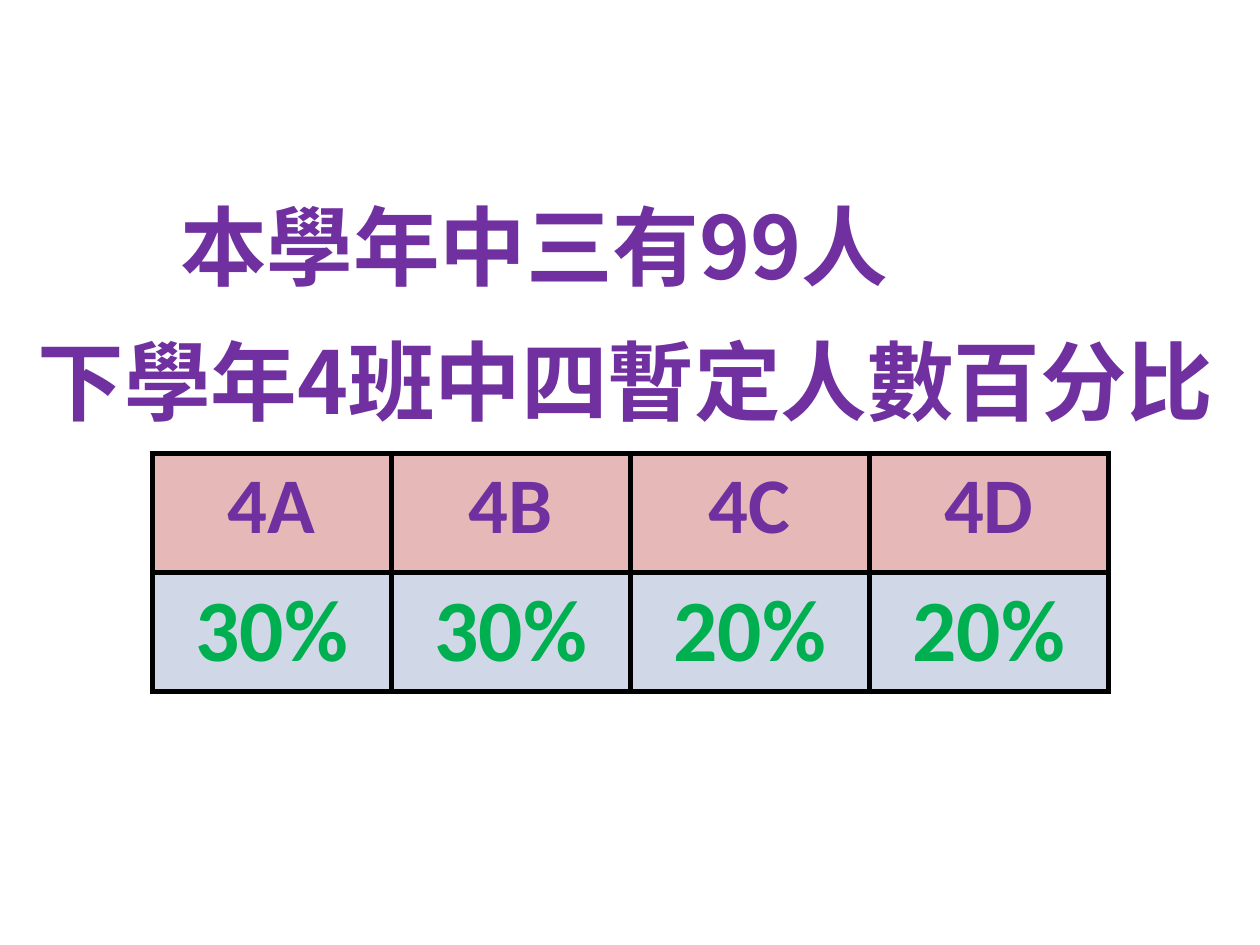
from dataclasses import dataclass

from lxml import etree
from pptx import Presentation
from pptx.dml.color import RGBColor
from pptx.enum import text
from pptx.oxml import ns
from pptx.util import Pt


@dataclass(frozen=True)
class Theme:
    heading_font: str = "Noto Sans CJK TC"
    table_font: str = "Calibri"
    purple: str = "7030A0"
    green: str = "00B050"
    pink: str = "E6B9B8"
    pale_blue: str = "D0D8E8"
    border: str = "000000"
    heading_size: float = 49.5
    class_size: float = 45
    share_size: float = 50
    border_width: float = 3


class SlideBuilder:
    def __init__(self, slide, theme):
        self.slide = slide
        self.theme = theme

    def style_runs(self, frame, font, size, color):
        for paragraph in frame.paragraphs:
            for run in paragraph.runs:
                run.font.name = font
                run.font.size = Pt(size)
                run.font.bold = True
                run.font.color.rgb = RGBColor.from_string(color)
                east_asian = etree.SubElement(run.font._element, ns.qn("a:ea"))
                east_asian.set("typeface", font)

    def write_heading(self, shape, wording):
        frame = shape.text_frame
        frame.text = wording
        frame.word_wrap = True
        frame.auto_size = text.MSO_AUTO_SIZE.SHAPE_TO_FIT_TEXT
        frame.vertical_anchor = text.MSO_ANCHOR.TOP
        frame.paragraphs[0].alignment = text.PP_ALIGN.LEFT
        theme = self.theme
        self.style_runs(frame, theme.heading_font, theme.heading_size, theme.purple)

    def title(self, wording, left, top, width, height):
        shape = self.slide.shapes.title
        shape.left, shape.top = Pt(left), Pt(top)
        shape.width, shape.height = Pt(width), Pt(height)
        self.write_heading(shape, wording)

    def heading(self, wording, left, top, width, height):
        shape = self.slide.shapes.add_textbox(Pt(left), Pt(top), Pt(width), Pt(height))
        self.write_heading(shape, wording)

    def cell_borders(self, cell):
        properties = cell._tc.get_or_add_tcPr()
        for position, side in enumerate(("lnL", "lnR", "lnT", "lnB")):
            line = etree.Element(ns.qn(f"a:{side}"), w=str(Pt(self.theme.border_width)))
            fill = etree.SubElement(line, ns.qn("a:solidFill"))
            etree.SubElement(fill, ns.qn("a:srgbClr"), val=self.theme.border)
            properties.insert(position, line)

    def table(self, rows, left, top, width, height):
        """Each row is (values, fill, text colour, text size, anchor)."""
        columns = len(rows[0][0])
        table = self.slide.shapes.add_table(
            len(rows), columns, Pt(left), Pt(top), Pt(width), Pt(height)).table
        for row_index, (values, fill, color, size, anchor) in enumerate(rows):
            for column_index, value in enumerate(values):
                cell = table.cell(row_index, column_index)
                cell.text = value
                cell.vertical_anchor = anchor
                cell.margin_left = cell.margin_right = Pt(5)
                cell.margin_top = cell.margin_bottom = Pt(2.9)
                cell.fill.solid()
                cell.fill.fore_color.rgb = RGBColor.from_string(fill)
                cell.text_frame.paragraphs[0].alignment = text.PP_ALIGN.CENTER
                self.style_runs(cell.text_frame, self.theme.table_font, size, color)
                self.cell_borders(cell)


def main():
    presentation = Presentation()
    presentation.slide_width, presentation.slide_height = Pt(720), Pt(540)
    theme = Theme()
    title_only = presentation.slide_layouts[5]
    builder = SlideBuilder(presentation.slides.add_slide(title_only), theme)

    # Current year headcount and next year's heading
    builder.title("本學年中三有99人", 95.8, 106.5, 614, 67)
    builder.heading("下學年4班中四暫定人數百分比", 14.4, 183.6, 690, 67)

    # Share of students in each class
    shares = {"4A": "30%", "4B": "30%", "4C": "20%", "4D": "20%"}
    builder.table(
        [
            (list(shares), theme.pink, theme.purple, theme.class_size, text.MSO_ANCHOR.TOP),
            (list(shares.values()), theme.pale_blue, theme.green, theme.share_size,
             text.MSO_ANCHOR.MIDDLE),
        ],
        87, 259.2, 546.4, 136)

    presentation.save("out.pptx")


if __name__ == "__main__":
    main()
